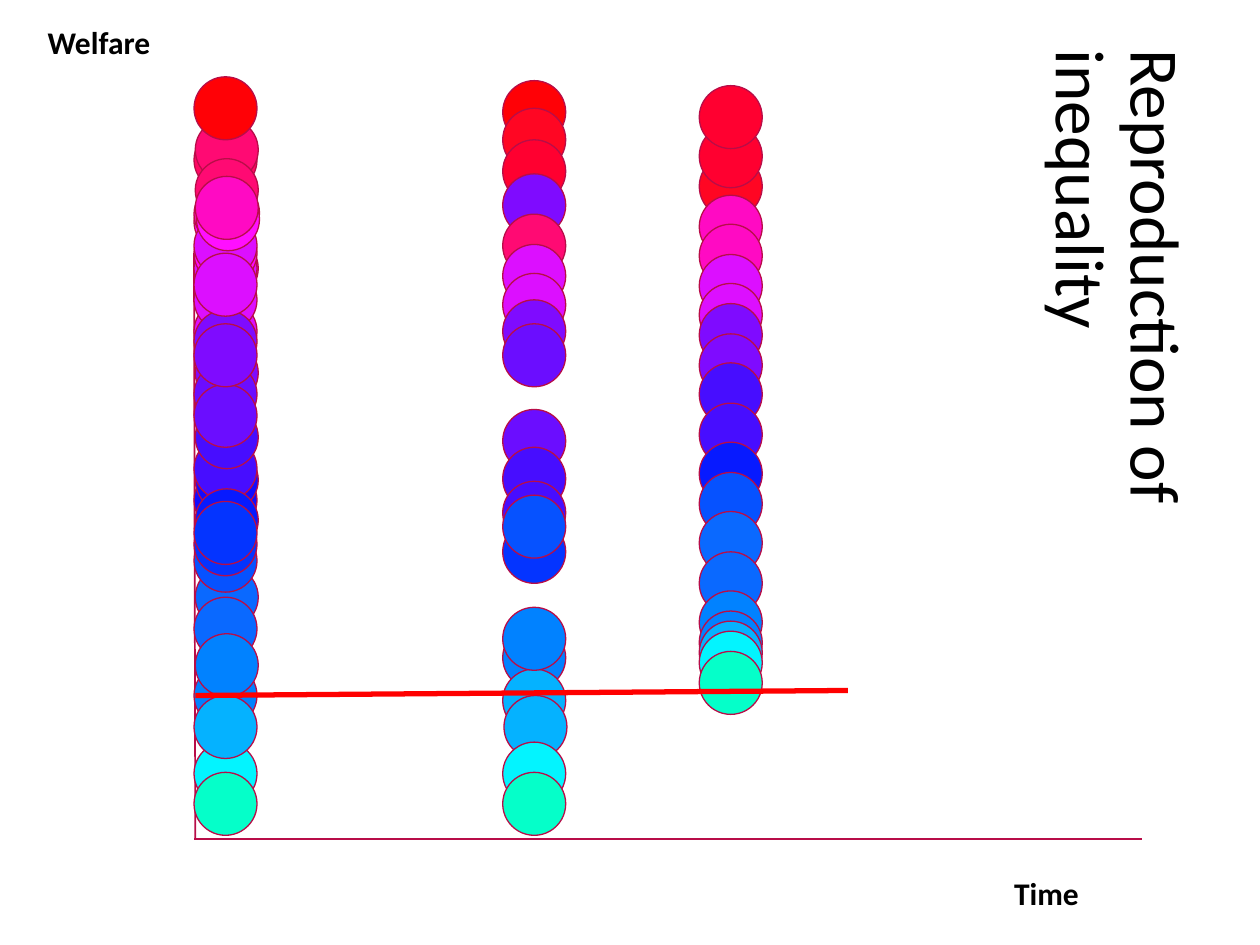
from lxml.etree import SubElement
from pptx import Presentation
from pptx.dml.color import RGBColor
from pptx.enum.shapes import MSO_CONNECTOR, MSO_SHAPE
from pptx.enum.text import MSO_ANCHOR
from pptx.oxml.ns import qn
from pptx.util import Inches, Pt

BLACK = RGBColor(0x00, 0x00, 0x00)
CRIMSON = RGBColor(0xB8, 0x0D, 0x48)
PURE_RED = RGBColor(0xFF, 0x00, 0x00)
# Welfare scale, from richest to poorest
RED = RGBColor(0xFF, 0x01, 0x06)
SCARLET = RGBColor(0xFF, 0x06, 0x23)
CHERRY = RGBColor(0xFF, 0x00, 0x30)
ROSE = RGBColor(0xFF, 0x07, 0x63)
PINK = RGBColor(0xFF, 0x0A, 0x73)
HOT_PINK = RGBColor(0xFF, 0x08, 0x94)
MAGENTA = RGBColor(0xFF, 0x0A, 0xC3)
FUCHSIA = RGBColor(0xFF, 0x0A, 0xFE)
BRIGHT_FUCHSIA = RGBColor(0xFF, 0x0F, 0xFF)
ORCHID = RGBColor(0xDC, 0x0F, 0xFF)
VIOLET = RGBColor(0x7F, 0x0B, 0xFF)
PURPLE = RGBColor(0x6B, 0x0D, 0xFF)
INDIGO = RGBColor(0x47, 0x0D, 0xFF)
ULTRAMARINE = RGBColor(0x13, 0x0B, 0xFF)
BLUE = RGBColor(0x07, 0x1A, 0xFF)
COBALT = RGBColor(0x04, 0x34, 0xFF)
ROYAL = RGBColor(0x06, 0x52, 0xFF)
AZURE = RGBColor(0x0A, 0x69, 0xFF)
SKY = RGBColor(0x01, 0x82, 0xFF)
LIGHT_SKY = RGBColor(0x05, 0xB2, 0xFF)
CYAN = RGBColor(0x03, 0xF4, 0xFF)
AQUA = RGBColor(0x05, 0xFF, 0xC9)

prs = Presentation()
prs.slide_width, prs.slide_height = Inches(10), Inches(7.5)
s = prs.slides.add_slide(prs.slide_layouts[6])
CELL = prs.slide_width / 100  # grid of 100 columns by 75 rows
DOT = 5


def add_line(x1, y1, x2, y2, color, width):
    ends = [round(v * CELL) for v in (x1, y1, x2, y2)]
    line = s.shapes.add_connector(MSO_CONNECTOR.STRAIGHT, *ends)
    line.line.color.rgb = color
    line.line.width = Pt(width)
    SubElement(line._element.spPr, qn("a:effectLst"))


def add_text(text, x, y, w, h, **font):
    box = s.shapes.add_textbox(*[round(v * CELL) for v in (x, y, w, h)])
    tf = box.text_frame
    tf.word_wrap = True
    p = tf.paragraphs[0]
    r = p.add_run()
    r.text = text
    r.font.color.rgb = BLACK
    for name, value in {"name": "Calibri", **font}.items():
        setattr(r.font, name, value)
    return box


title = add_text("Reproduction of inequality", 58.1, 27, 60.9, 12.8, size=Pt(39.6))
title.rotation = 90
title.text_frame.vertical_anchor = MSO_ANCHOR.MIDDLE
title.text_frame.margin_right = Inches(0.3)
title.text_frame.paragraphs[0].line_spacing = 0.9

add_line(15.4, 20.1, 15.5, 66.6, CRIMSON, 1)
add_line(15.4, 66.6, 90.6, 66.6, CRIMSON, 1)

# Each generation: left column, then (row, colour, optional sideways shift), back to front
generations = [
    (15.4, [
        (44.9, AZURE, 0.1), (52.7, SKY, 0.0), (58.9, CYAN), (61.3, AQUA),
        (42, ROYAL), (40.7, COBALT), (18.8, ORCHID, 0.1), (27.1, VIOLET, 0.1),
        (23.8, ORCHID), (15.1, BRIGHT_FUCHSIA), (28.8, PURPLE),
        (37.2, ULTRAMARINE), (18.8, ORCHID), (14.4, HOT_PINK, 0.2),
        (17.6, FUCHSIA), (21.3, ORCHID), (35.6, ULTRAMARINE, 0.1),
        (34.7, INDIGO), (38.8, BLUE, 0.1), (47.4, AZURE), (17, ORCHID),
        (14.5, MAGENTA), (10.2, ROSE), (9.4, PINK, 0.1), (12.6, PINK, 0.1),
        (14.9, BRIGHT_FUCHSIA, 0.2), (6.1, RED), (50.3, SKY, 0.1),
        (24.6, VIOLET), (32.2, INDIGO, 0.1), (20.1, ORCHID), (30.5, PURPLE),
        (39.8, COBALT), (25.7, VIOLET), (55.2, LIGHT_SKY), (14, MAGENTA, 0.1),
    ]),
    (39.9, [
        (6.4, RED), (8.6, SCARLET), (11.1, CHERRY), (13.8, VIOLET), (17, PINK),
        (19.4, ORCHID), (21.7, ORCHID), (23.8, VIOLET), (25.7, PURPLE),
        (32.5, PURPLE), (35.5, INDIGO), (38.2, INDIGO), (41.3, COBALT),
        (39.3, ROYAL), (49.7, SKY), (53.1, LIGHT_SKY), (55.2, LIGHT_SKY, 0.1),
        (58.9, CYAN), (61.3, AQUA), (48.2, SKY),
    ]),
    (55.5, [
        (12.3, SCARLET), (9.9, CHERRY), (6.8, CHERRY), (15.5, MAGENTA),
        (17.8, MAGENTA), (20.2, ORCHID), (22.5, ORCHID), (24.1, VIOLET),
        (26.5, VIOLET), (28.8, INDIGO), (32, INDIGO), (35.1, BLUE),
        (37.5, ROYAL), (40.6, AZURE), (43.8, AZURE), (46.9, SKY), (48.5, SKY),
        (49.3, LIGHT_SKY), (50.1, CYAN), (51.7, AQUA),
    ]),
]
for column, dots in generations:
    for row, color, *shift in dots:
        box = [round(v * CELL) for v in (column + sum(shift), row, DOT, DOT)]
        dot = s.shapes.add_shape(MSO_SHAPE.FLOWCHART_CONNECTOR, *box)
        dot.shadow.inherit = False
        dot.fill.solid()
        dot.fill.fore_color.rgb = color
        dot.line.color.rgb = CRIMSON
        dot.line.width = Pt(0.75)

add_text("Welfare", 2.8, 1.3, 27.6, 4, size=Pt(18), bold=True)
add_text("Time", 79.5, 68.9, 7.2, 4, size=Pt(18), bold=True)

# Poverty line
add_line(15.5, 55.2, 67.3, 54.8, PURE_RED, 3)

prs.save("out.pptx")
